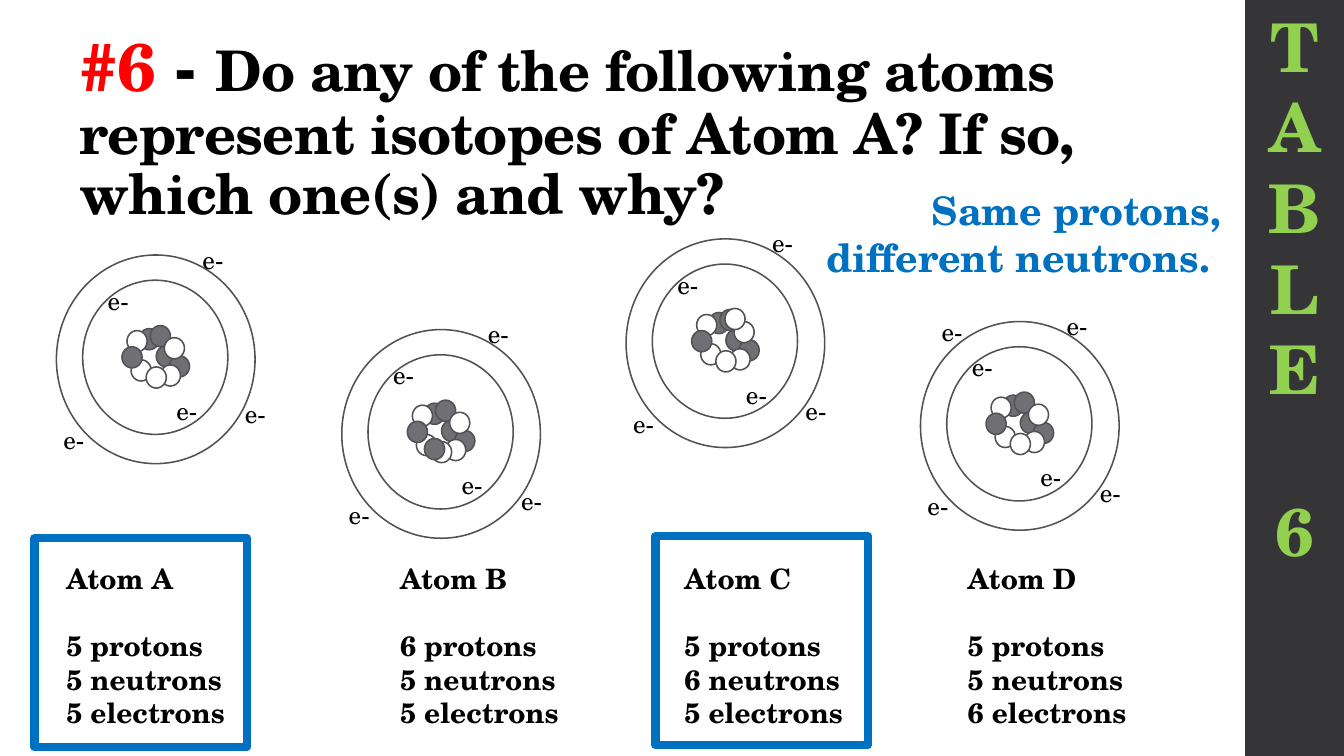
import pptx
import pptx.dml.color
import pptx.enum.shapes
import pptx.enum.text
import pptx.util

PX = 9144
FONT = "TeX Gyre Schola"
COLORS = {
    "black": "000000", "white": "FFFFFF", "red": "FF0000", "blue": "0070C0",
    "green": "92D050", "sidebar": "353537", "proton": "6F6F74", "outline": "525256",
}
ALIGN = pptx.enum.text.PP_ALIGN
SHAPE = pptx.enum.shapes.MSO_SHAPE

PROTONS_BACK = [(82, 73), (99, 90), (112, 100), (93, 70)]
NEUTRONS = [(103, 109), (70, 75), (74, 104), (89, 111), (107, 82)]
PROTON_FRONT = (65, 91)
NUCLEONS = (
    [("proton", spot) for spot in PROTONS_BACK]
    + [("white", spot) for spot in NEUTRONS]
    + [("proton", PROTON_FRONT)]
)
ELECTRONS = [(41, 25), (109, 134), (135, -16), (-3, 163)]
LOWER_RIGHT = (168, 150)

ATOMS = [
    dict(name="A", counts=(5, 5, 5), at=(56, 253), label_left=56,
         electrons=[(177, 137)], frame=(34, 534)),
    dict(name="B", counts=(6, 5, 5), at=(339, 327), label_left=387,
         electrons=[LOWER_RIGHT], nucleons=[("proton", (82, 108))]),
    dict(name="C", counts=(5, 6, 5), at=(621, 237), label_left=669,
         electrons=[LOWER_RIGHT], nucleons=[("white", (98, 69))], frame=(650, 532)),
    dict(name="D", counts=(5, 5, 6), at=(913, 319), label_left=950,
         electrons=[LOWER_RIGHT, (11, -10)]),
]


def rgb(name):
    return pptx.dml.color.RGBColor.from_string(COLORS[name])


def add_outline(slide, preset, box, fill=None, line=None, weight=1.1):
    outline = slide.shapes.add_shape(preset, *(n * PX for n in box))
    outline.shadow.inherit = False
    if fill:
        outline.fill.solid()
        outline.fill.fore_color.rgb = rgb(fill)
    else:
        outline.fill.background()
    if line:
        outline.line.color.rgb = rgb(line)
        outline.line.width = pptx.util.Pt(weight)
    else:
        outline.line.fill.background()


def add_text(slide, box, lines, size=18, color="black", bold=True,
             align=ALIGN.LEFT, spacing=None, gap_at=None, gap=0, tracking=None):
    frame = slide.shapes.add_textbox(*(n * PX for n in box)).text_frame
    frame.word_wrap = True
    for index, line in enumerate(lines):
        paragraph = frame.paragraphs[0] if index == 0 else frame.add_paragraph()
        paragraph.alignment = align
        if spacing:
            paragraph.line_spacing = spacing
        if index == gap_at:
            paragraph.space_before = pptx.util.Pt(gap)
        pieces = [(line, size, color)] if isinstance(line, str) else line
        for words, points, tint in pieces:
            run = paragraph.add_run()
            run.text = words
            run.font.name = FONT
            run.font.size = pptx.util.Pt(points)
            run.font.bold = bold
            run.font.color.rgb = rgb(tint)
            if tracking:
                run.font._element.set("spc", str(tracking))


def add_sidebar(slide, left, top, width, height):
    add_outline(slide, SHAPE.RECTANGLE, (left, top, width, height), fill="sidebar")
    add_text(slide, (left, top, width - 2, 576), list("TABLE6"), size=48,
             color="green", align=ALIGN.CENTER, gap_at=5, gap=58)


def add_question(slide, left, top, width, height):
    question = [
        ("#6 ", 48, "red"),
        ("- ", 48, "black"),
        ("Do any of the following atoms represent isotopes of Atom A? "
         "If so, which one(s) and why?", 40, "black"),
    ]
    add_text(slide, (left, top, width, height), [question], spacing=0.9, tracking=-50)


def add_answer(slide, left, top, width, height):
    add_text(slide, (left, top, width, height),
             ["Same protons, different neutrons. "],
             size=28, color="blue", align=ALIGN.RIGHT)


def add_atom(slide, left, top, nucleons, electrons):
    for fill, (x, y) in NUCLEONS + nucleons:
        add_outline(slide, SHAPE.OVAL, (left + x, top + y, 20, 21), fill, "outline")
    for x, y, width, height in [(26, 25, 144, 153), (0, 0, 197, 207)]:
        add_outline(slide, SHAPE.OVAL, (left + x, top + y, width, height), line="outline")
    for x, y in ELECTRONS + electrons:
        add_text(slide, (left + x, top + y, 52, 40), ["e-"], bold=False)


def add_label(slide, left, top, name, counts):
    particles = zip(counts, ("protons", "neutrons", "electrons"))
    lines = [f"Atom {name}"] + [f"{count} {particle}" for count, particle in particles]
    add_text(slide, (left, top, 186, 209), lines, size=20, gap_at=1, gap=24)


def main():
    deck = pptx.Presentation()
    deck.slide_width = 1333 * PX
    deck.slide_height = 750 * PX
    slide = deck.slides.add_slide(deck.slide_layouts[6])
    add_sidebar(slide, 1235, 0, 100, 750)
    add_question(slide, 69, 28, 1169, 125)
    for atom in ATOMS:
        add_atom(slide, *atom["at"], atom.get("nucleons", []), atom["electrons"])
        add_label(slide, atom["label_left"], 552, atom["name"], atom["counts"])
        if "frame" in atom:
            add_outline(slide, SHAPE.RECTANGLE, (*atom["frame"], 211, 207),
                        line="blue", weight=6)
    add_answer(slide, 762, 180, 459, 104)
    deck.save("out.pptx")


if __name__ == "__main__":
    main()
